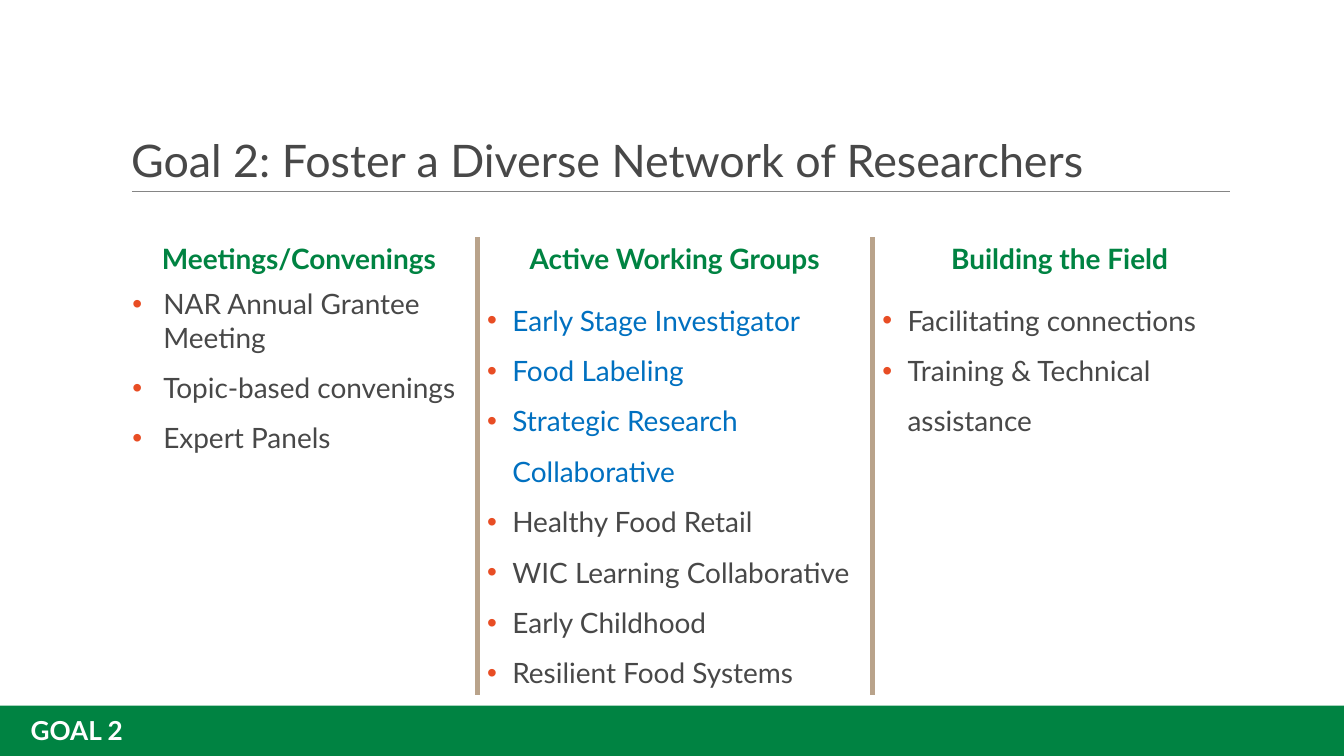
import pptx
import pptx.dml.color
import pptx.enum.shapes
import pptx.enum.text
import pptx.oxml
import pptx.oxml.ns
import pptx.util

Pt = pptx.util.Pt
ALIGN = pptx.enum.text.PP_ALIGN
ANCHOR = pptx.enum.text.MSO_ANCHOR

THEME = {
    "font": "Lato",
    "green": "008342", "text": "484848", "highlight": "0070C0",
    "bullet": "E84D24", "divider": "B9A38B", "rule": "858585", "white": "FFFFFF",
    "title_size": 24, "table_size": 15, "label_size": 14,
}

TITLE = "Goal 2: Foster a Diverse Network of Researchers"
GOAL_LABEL = "GOAL 2"

# Each item: text, theme colour, line spacing
COLUMNS = [
    {"heading": "Meetings/Convenings", "width": 190.8, "indent": (17.3, -16.6),
     "items": [("NAR Annual Grantee Meeting", "text", 1.0),
               ("Topic-based convenings", "text", 1.5),
               ("Expert Panels", "text", 1.5)]},
    {"heading": "Active Working Groups", "width": 211.7, "indent": (13.5, -13.5),
     "items": [("Early Stage Investigator", "highlight", 1.5),
               ("Food Labeling", "highlight", 1.5),
               ("Strategic Research Collaborative", "highlight", 1.5),
               ("Healthy Food Retail", "text", 1.5),
               ("WIC Learning Collaborative", "text", 1.5),
               ("Early Childhood", "text", 1.5),
               ("Resilient Food Systems", "text", 1.5)]},
    {"heading": "Building the Field", "width": 200.9, "indent": (13.5, -13.5),
     "items": [("Facilitating connections", "text", 1.5),
               ("Training & Technical assistance", "text", 1.5)]},
]

SLIDE_WIDTH, SLIDE_HEIGHT = 720, 405
BAND_TOP = 378
CONTENT_LEFT = 64.8
TABLE_TOP = 127
ROW_HEIGHTS = (24, 218)
DIVIDER_WIDTH = 3


def color(name):
    return pptx.dml.color.RGBColor.from_string(THEME[name])


def add_run(paragraph, text, size, color_name, bold=False):
    run = paragraph.add_run()
    run.text = text
    run.font.name = THEME["font"]
    run.font.size = Pt(THEME[size])
    run.font.bold = bold
    run.font.color.rgb = color(color_name)


def add_green_box(slide, left, top, width, height):
    box = slide.shapes.add_shape(pptx.enum.shapes.MSO_SHAPE.RECTANGLE,
                                 Pt(left), Pt(top), Pt(width), Pt(height))
    box.shadow.inherit = False
    box.fill.solid()
    box.fill.fore_color.rgb = color("green")
    box.line.fill.background()
    return box


def set_margins(target):
    """Apply the common insets to a text frame or a table cell."""
    target.margin_left = target.margin_right = Pt(5.4)
    target.margin_top = target.margin_bottom = Pt(2.7)


def append_xml(parent, xml, position=None):
    tag, rest = xml.split(" ", 1)
    element = pptx.oxml.parse_xml(f'{tag} {pptx.oxml.ns.nsdecls("a")} {rest}')
    parent.insert(len(parent) if position is None else position, element)


def add_bullet(paragraph, indent):
    left, first_line = indent
    properties = paragraph._p.get_or_add_pPr()
    properties.set("marL", str(Pt(left)))
    properties.set("indent", str(Pt(first_line)))
    append_xml(properties, f'<a:buClr ><a:srgbClr val="{THEME["bullet"]}"/></a:buClr>')
    append_xml(properties, '<a:buFont typeface="Arial"/>')
    append_xml(properties, '<a:buChar char="•"/>')


def set_borders(cell, divider_sides):
    """Draw dividers on the given sides and clear the other borders."""
    properties = cell._tc.get_or_add_tcPr()
    divider = f'<a:solidFill><a:srgbClr val="{THEME["divider"]}"/></a:solidFill>'
    for position, side in enumerate("LRTB"):
        line_fill = divider if side in divider_sides else "<a:noFill/>"
        append_xml(properties,
                   f'<a:ln{side} w="{Pt(DIVIDER_WIDTH)}">{line_fill}</a:ln{side}>',
                   position)


def add_title(slide):
    box = slide.shapes.add_textbox(Pt(CONTENT_LEFT), Pt(17), Pt(555), Pt(85.5))
    frame = box.text_frame
    frame.word_wrap = True
    frame.vertical_anchor = ANCHOR.BOTTOM
    set_margins(frame)
    frame.paragraphs[0].line_spacing = 0.85
    add_run(frame.paragraphs[0], TITLE, "title_size", "text")

    rule = slide.shapes.add_connector(pptx.enum.shapes.MSO_CONNECTOR.STRAIGHT,
                                      Pt(70.6), Pt(102.7), Pt(658.8), Pt(102.7))
    rule.line.color.rgb = color("rule")
    rule.line.width = Pt(0.75)
    append_xml(rule._element.spPr, "<a:effectLst />")


def add_goal_table(slide):
    table = slide.shapes.add_table(
        len(ROW_HEIGHTS), len(COLUMNS), Pt(CONTENT_LEFT), Pt(TABLE_TOP),
        Pt(sum(column["width"] for column in COLUMNS)), Pt(sum(ROW_HEIGHTS))).table
    table.first_row = table.horz_banding = False
    for row, height in zip(table.rows, ROW_HEIGHTS):
        row.height = Pt(height)

    for index, column in enumerate(COLUMNS):
        table.columns[index].width = Pt(column["width"])
        sides = ("L" if index > 0 else "") + ("R" if index < len(COLUMNS) - 1 else "")
        heading_cell, items_cell = table.cell(0, index), table.cell(1, index)
        for cell in (heading_cell, items_cell):
            set_margins(cell)
            cell.fill.background()
            set_borders(cell, sides)

        heading = heading_cell.text_frame.paragraphs[0]
        heading.alignment = ALIGN.CENTER
        add_run(heading, column["heading"], "table_size", "green", bold=True)

        frame = items_cell.text_frame
        for number, (text, color_name, spacing) in enumerate(column["items"]):
            item = frame.add_paragraph() if number else frame.paragraphs[0]
            item.line_spacing = spacing
            add_bullet(item, column["indent"])
            add_run(item, text, "table_size", color_name)


def add_goal_label(slide):
    frame = add_green_box(slide, 11, 380, 61, 22.5).text_frame
    frame.word_wrap = False
    frame.vertical_anchor = ANCHOR.TOP
    set_margins(frame)
    frame.paragraphs[0].alignment = ALIGN.LEFT
    add_run(frame.paragraphs[0], GOAL_LABEL, "label_size", "white", bold=True)


def main():
    deck = pptx.Presentation()
    deck.slide_width, deck.slide_height = Pt(SLIDE_WIDTH), Pt(SLIDE_HEIGHT)
    slide = deck.slides.add_slide(deck.slide_layouts[6])
    add_green_box(slide, 0, BAND_TOP, SLIDE_WIDTH, SLIDE_HEIGHT - BAND_TOP)
    add_title(slide)
    add_goal_table(slide)
    add_goal_label(slide)
    deck.save("out.pptx")


if __name__ == "__main__":
    main()
